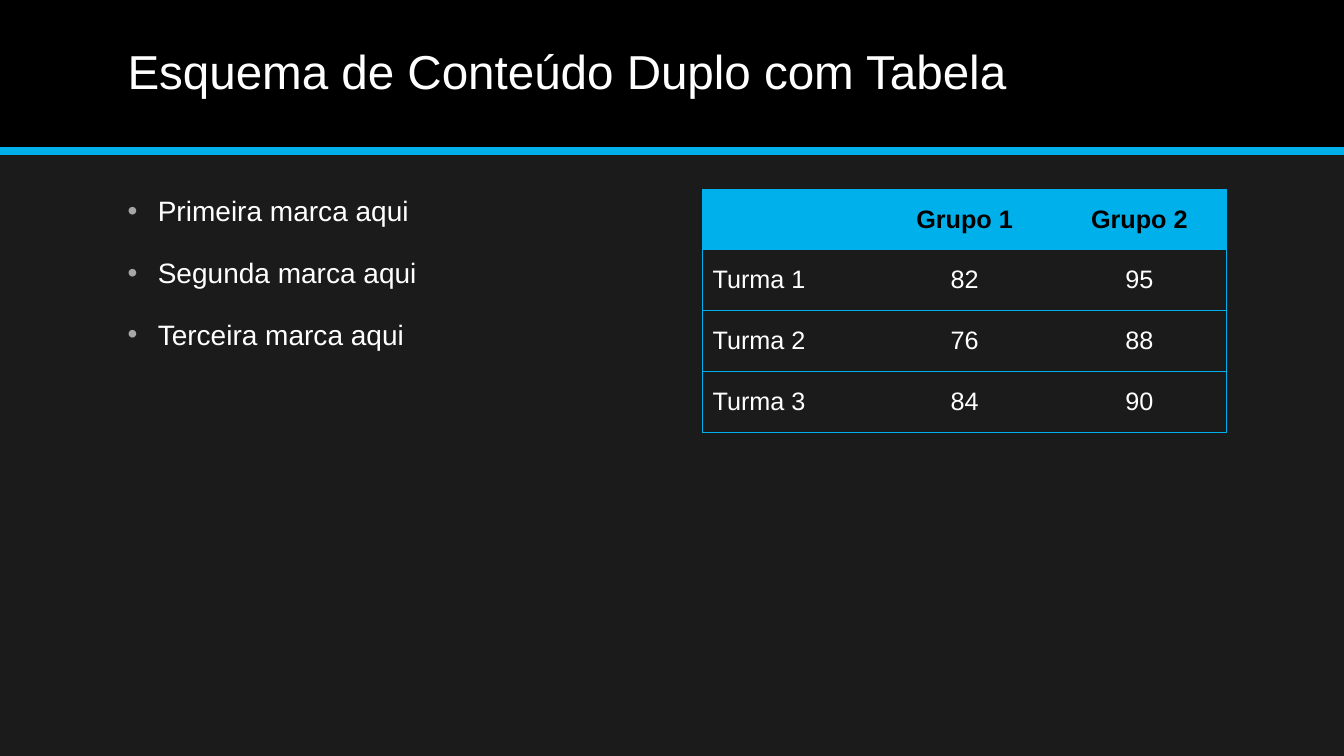
from dataclasses import dataclass

import lxml.etree
import pptx
import pptx.dml.color
import pptx.enum.shapes
import pptx.enum.text
import pptx.oxml.ns
import pptx.util

RGBColor = pptx.dml.color.RGBColor
Pt = pptx.util.Pt
qn = pptx.oxml.ns.qn

BLACK = RGBColor(0x00, 0x00, 0x00)
WHITE = RGBColor(0xFF, 0xFF, 0xFF)
CHARCOAL = RGBColor(0x1B, 0x1B, 0x1B)
GREY = RGBColor(0xA6, 0xA6, 0xA6)
CYAN = RGBColor(0x00, 0xB0, 0xEA)

FONT = "Arial"
COLUMNS, ROWS = 80, 50
SLIDE_W, SLIDE_H = pptx.util.Inches(13.33), pptx.util.Inches(7.5)

BULLETS = ["Primeira marca aqui", "Segunda marca aqui", "Terceira marca aqui"]
SCORES = [
    ["", "Grupo 1", "Grupo 2"],
    ["Turma 1", "82", "95"],
    ["Turma 2", "76", "88"],
    ["Turma 3", "84", "90"],
]


@dataclass(frozen=True)
class Area:
    """A rectangle in grid columns and rows."""
    col: float
    row: float
    cols: float
    rows: float

    def emu(self) -> tuple[int, int, int, int]:
        return (across(self.col), down(self.row), across(self.cols), down(self.rows))


def across(cols: float) -> int:
    return round(SLIDE_W * cols / COLUMNS)


def down(rows: float) -> int:
    return round(SLIDE_H * rows / ROWS)


HEADER = Area(0, 0, COLUMNS, 10)
TITLE = Area(7, 0.93, 66, 8)
BODY = Area(7, 12.5, 31.2, 32.5)
TABLE = Area(41.82, 12.5, 31.2, 16.08)


def set_font(p, size: float, color: RGBColor, bold: bool = False) -> None:
    p.font.name = FONT
    p.font.size = Pt(size)
    p.font.color.rgb = color
    p.font.bold = bold


def add_text(s, area: Area, lines: list[str], size: float):
    tf = s.shapes.add_textbox(*area.emu()).text_frame
    tf.word_wrap = True
    tf.text = "\n".join(lines)
    for p in tf.paragraphs:
        set_font(p, size, WHITE)
    return tf


def add_bullet(p) -> None:
    p.space_before = Pt(20)
    pPr = p._p.get_or_add_pPr()
    indent = pptx.util.Inches(0.3)
    pPr.set("marL", str(indent))
    pPr.set("indent", str(-indent))
    color = lxml.etree.Element(qn("a:buClr"))
    lxml.etree.SubElement(color, qn("a:srgbClr"), val=str(GREY))
    font = lxml.etree.Element(qn("a:buFont"), typeface=FONT)
    char = lxml.etree.Element(qn("a:buChar"), char="•")
    # Bullet settings come before the default run properties
    for element in (color, font, char):
        pPr.find(qn("a:defRPr")).addprevious(element)


def set_borders(cell, sides: str) -> None:
    """Draw the listed sides (L, R, T, B) and clear the others."""
    tcPr = cell._tc.get_or_add_tcPr()
    for i, side in enumerate("LRTB"):
        ln = lxml.etree.Element(qn(f"a:ln{side}"), w=str(Pt(0.5)))
        if side in sides:
            fill = lxml.etree.SubElement(ln, qn("a:solidFill"))
            lxml.etree.SubElement(fill, qn("a:srgbClr"), val=str(CYAN))
        else:
            lxml.etree.SubElement(ln, qn("a:noFill"))
        tcPr.insert(i, ln)


def add_header(s) -> None:
    band = s.shapes.add_shape(pptx.enum.shapes.MSO_SHAPE.RECTANGLE, *HEADER.emu())
    band.shadow.inherit = False
    band.fill.solid()
    band.fill.fore_color.rgb = BLACK
    band.line.fill.background()

    rule = s.shapes.add_connector(pptx.enum.shapes.MSO_CONNECTOR.STRAIGHT,
                                  0, down(HEADER.rows), SLIDE_W, down(HEADER.rows))
    rule.line.color.rgb = CYAN
    rule.line.width = Pt(6)
    lxml.etree.SubElement(rule._element.spPr, qn("a:effectLst"))


def add_scores(s) -> None:
    n_rows, n_cols = len(SCORES), len(SCORES[0])
    table = s.shapes.add_table(n_rows, n_cols, *TABLE.emu()).table
    table.horz_banding = False
    for i, row in enumerate(SCORES):
        for j, value in enumerate(row):
            cell = table.cell(i, j)
            cell.text = value
            cell.vertical_anchor = pptx.enum.text.MSO_ANCHOR.MIDDLE
            is_head = i == 0
            if is_head:
                cell.fill.solid()
                cell.fill.fore_color.rgb = CYAN
            else:
                cell.fill.background()
            p = cell.text_frame.paragraphs[0]
            set_font(p, 18, BLACK if is_head else WHITE, is_head)
            if j > 0:
                p.alignment = pptx.enum.text.PP_ALIGN.CENTER
            outer = ("L" if j == 0 else "") + ("R" if j == n_cols - 1 else "")
            set_borders(cell, "TB" + outer)


def main() -> None:
    prs = pptx.Presentation()
    prs.slide_width, prs.slide_height = SLIDE_W, SLIDE_H
    s = prs.slides.add_slide(prs.slide_layouts[6])
    s.background.fill.solid()
    s.background.fill.fore_color.rgb = CHARCOAL

    # Header band and title
    add_header(s)
    tf = add_text(s, TITLE, ["Esquema de Conteúdo Duplo com Tabela"], 34)
    tf.vertical_anchor = pptx.enum.text.MSO_ANCHOR.MIDDLE
    tf.paragraphs[0].line_spacing = 0.9

    # Bullets on the left, table on the right
    for p in add_text(s, BODY, BULLETS, 20).paragraphs:
        add_bullet(p)
    add_scores(s)

    prs.save("out.pptx")


if __name__ == "__main__":
    main()
